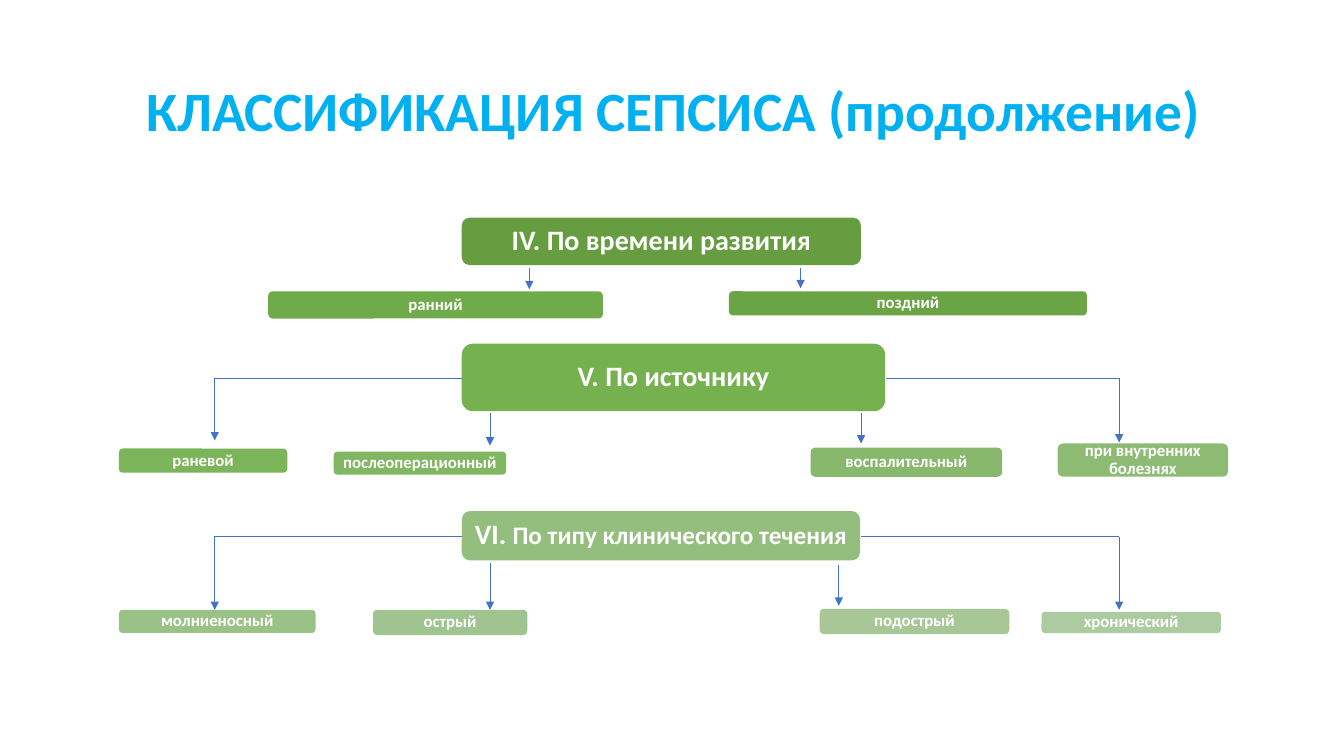
from lxml import etree
from pptx import Presentation
from pptx.dml.color import RGBColor
from pptx.enum.shapes import MSO_CONNECTOR, MSO_SHAPE
from pptx.enum.text import MSO_ANCHOR, PP_ALIGN
from pptx.oxml.ns import qn
from pptx.util import Inches, Pt

ROUNDED = MSO_SHAPE.ROUNDED_RECTANGLE
STRAIGHT = MSO_CONNECTOR.STRAIGHT
MIDDLE = MSO_ANCHOR.MIDDLE
CENTER = PP_ALIGN.CENTER

WHITE = RGBColor(0xFF, 0xFF, 0xFF)
TITLE_BLUE = RGBColor(0x00, 0xB0, 0xF0)
ARROW_BLUE = RGBColor(0x44, 0x72, 0xC4)
GREEN_TIME = RGBColor(0x66, 0x9D, 0x40)
GREEN_LATE = RGBColor(0x6B, 0xA4, 0x45)
GREEN_EARLY = RGBColor(0x6F, 0xAB, 0x4A)
GREEN_SOURCE = RGBColor(0x75, 0xB1, 0x4F)
GREEN_WOUND = RGBColor(0x7B, 0xB4, 0x59)
GREEN_SURGERY = RGBColor(0x81, 0xB6, 0x62)
GREEN_INFLAMED = RGBColor(0x87, 0xB8, 0x6B)
GREEN_INTERNAL = RGBColor(0x8D, 0xBB, 0x74)
GREEN_COURSE = RGBColor(0x94, 0xBE, 0x7D)
GREEN_FULMINANT = RGBColor(0x9A, 0xC1, 0x86)
GREEN_ACUTE = RGBColor(0xA0, 0xC4, 0x8F)
GREEN_SUBACUTE = RGBColor(0xA7, 0xC7, 0x97)
GREEN_CHRONIC = RGBColor(0xAD, 0xCB, 0xA0)

COLUMNS, ROWS = 133.3, 75
HEADING_LEFT = 45.8
OUTER_LEFT, OUTER_RIGHT = 21.3, 111

HEADINGS = [
    (21.6, 39.6, 4.7, GREEN_TIME, [("IV. По времени развития", 20)]),
    (34.1, 42, 6.7, GREEN_SOURCE, [("V. По источнику", 20)]),
    (50.7, 39.5, 4.9, GREEN_COURSE,
     [("VI. ", 20), ("По типу клинического течения", 18)]),
]
KINDS = [
    (72.3, 28.9, 35.5, 2.4, GREEN_LATE, "поздний"),
    (26.6, 28.9, 33.2, 2.7, GREEN_EARLY, "ранний"),
    (11.8, 44.5, 16.7, 2.4, GREEN_WOUND, "раневой"),
    (33.1, 44.8, 17.1, 2.3, GREEN_SURGERY, "послеоперационный"),
    (80.4, 44.4, 19, 2.9, GREEN_INFLAMED, "воспалительный"),
    (104.9, 44, 16.9, 3.3, GREEN_INTERNAL, "при внутренних болезнях"),
    (11.8, 60.5, 19.5, 2.3, GREEN_FULMINANT, "молниеносный"),
    (37, 60.5, 15.3, 2.5, GREEN_ACUTE, "острый"),
    (81.3, 60.4, 18.8, 2.5, GREEN_SUBACUTE, "подострый"),
    (103.3, 60.7, 17.8, 2.1, GREEN_CHRONIC, "хронический"),
]
DOWN_ARROWS = [
    (52.5, 26.6, 28.7), (79.4, 26.6, 28.6),
    (48.6, 41, 44.2), (85.4, 41, 44),
    (OUTER_LEFT, 37.5, 43.7), (OUTER_RIGHT, 37.5, 43.9),
    (48.6, 55.9, 60.5), (83.2, 56.1, 60.1),
    (OUTER_LEFT, 53.2, 60.5), (OUTER_RIGHT, 53.3, 60.5),
]
SIDE_BRANCHES = [(37.5, 87.9), (53.2, 85.4)]


class SepsisSlide:
    """Draw the classification chart on a slide grid in one style."""

    def __init__(self, presentation):
        self.slide = presentation.slides.add_slide(presentation.slide_layouts[6])
        self.column = presentation.slide_width / COLUMNS
        self.row = presentation.slide_height / ROWS
        self.frame_style = {
            "word_wrap": True, "vertical_anchor": MIDDLE,
            "margin_left": Inches(0.06), "margin_right": Inches(0.06),
            "margin_top": 0, "margin_bottom": 0,
        }
        self.paragraph_style = {"alignment": CENTER, "line_spacing": 0.9}
        self.font_style = {"name": "Calibri", "bold": True}

    def place(self, left, top, width, height):
        return (round(left * self.column), round(top * self.row),
                round(width * self.column), round(height * self.row))

    def apply(self, target, style):
        for name, value in style.items():
            setattr(target, name, value)

    def label(self, shape, runs, color):
        self.apply(shape.text_frame, self.frame_style)
        paragraph = shape.text_frame.paragraphs[0]
        self.apply(paragraph, self.paragraph_style)
        for text, size in runs:
            run = paragraph.add_run()
            run.text = text
            self.apply(run.font, {**self.font_style, "size": Pt(size)})
            run.font.color.rgb = color

    def title(self, box, text, size):
        shape = self.slide.shapes.add_textbox(*self.place(*box))
        self.label(shape, [(text, size)], TITLE_BLUE)

    def block(self, box, fill, runs):
        shape = self.slide.shapes.add_shape(ROUNDED, *self.place(*box))
        shape.shadow.inherit = False
        shape.fill.solid()
        shape.fill.fore_color.rgb = fill
        shape.line.fill.background()
        self.label(shape, runs, WHITE)

    def line(self, start, end, arrow=False):
        connector = self.slide.shapes.add_connector(
            STRAIGHT, *self.place(*start, *end))
        connector.line.color.rgb = ARROW_BLUE
        connector.line.width = Pt(0.5)
        properties = connector._element.spPr
        if arrow:
            etree.SubElement(properties.find(qn("a:ln")), qn("a:tailEnd"),
                             type="triangle")
        etree.SubElement(properties, qn("a:effectLst"))


def main():
    presentation = Presentation()
    presentation.slide_width = Inches(13.33)
    presentation.slide_height = Inches(7.5)
    chart = SepsisSlide(presentation)

    chart.title((11.8, 6.2, 110, 10.2),
                "КЛАССИФИКАЦИЯ СЕПСИСА (продолжение)", 39.6)
    for top, width, height, fill, runs in HEADINGS:
        chart.block((HEADING_LEFT, top, width, height), fill, runs)
    for left, top, width, height, fill, text in KINDS:
        chart.block((left, top, width, height), fill, [(text, 12)])
    for x, top, bottom in DOWN_ARROWS:
        chart.line((x, top), (x, bottom), arrow=True)
    for y, heading_right in SIDE_BRANCHES:
        chart.line((HEADING_LEFT, y), (OUTER_LEFT, y))
        chart.line((heading_right, y), (OUTER_RIGHT, y))

    presentation.save("out.pptx")


if __name__ == "__main__":
    main()
